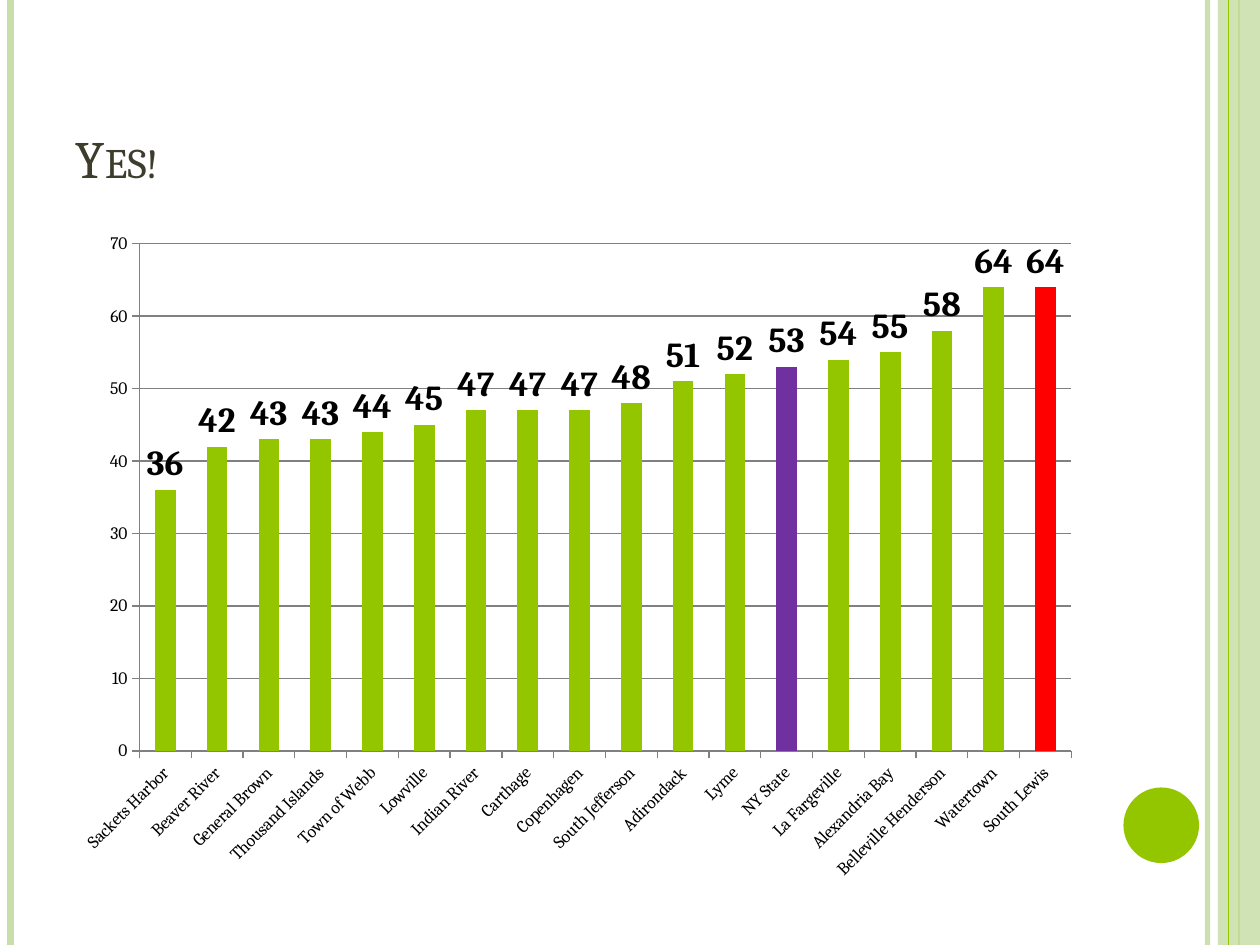
import pptx
import pptx.chart.data
import pptx.dml.color
import pptx.enum.chart
import pptx.enum.shapes
import pptx.enum.text
import pptx.oxml
import pptx.oxml.ns
import pptx.util

RGBColor = pptx.dml.color.RGBColor
LEAF = RGBColor(0x94, 0xC6, 0x00)
PALE = RGBColor(0xC8, 0xDF, 0xAB)
OLIVE = RGBColor(0x3E, 0x3D, 0x2D)
PURPLE = RGBColor(0x70, 0x30, 0xA0)
RED = RGBColor(0xFF, 0x00, 0x00)
BLACK = RGBColor(0x00, 0x00, 0x00)
GRAY = RGBColor(0x80, 0x80, 0x80)

SCORES = {
    "Sackets Harbor": 36, "Beaver River": 42, "General Brown": 43,
    "Thousand Islands": 43, "Town of Webb": 44, "Lowville": 45,
    "Indian River": 47, "Carthage": 47, "Copenhagen": 47,
    "South Jefferson": 48, "Adirondack": 51, "Lyme": 52, "NY State": 53,
    "La Fargeville": 54, "Alexandria Bay": 55, "Belleville Henderson": 58,
    "Watertown": 64, "South Lewis": 64,
}
HIGHLIGHTS = {"NY State": PURPLE, "South Lewis": RED}


def style_font(font, size, color, bold=False, name="Cambria"):
    font.name = name
    font.size = pptx.util.Pt(size)
    font.bold = bold
    font.color.rgb = color


def write_text(frame, words, size=18, color=BLACK, small_caps=False):
    frame.text = words
    paragraph = frame.paragraphs[0]
    paragraph.alignment = pptx.enum.text.PP_ALIGN.LEFT
    run = paragraph.runs[0]
    style_font(run.font, size, color)
    if small_caps:
        run.font._element.set("cap", "small")


def set_alpha(fill_parent, percent):
    for color in fill_parent.iter(pptx.oxml.ns.qn("a:srgbClr")):
        alpha = pptx.oxml.parse_xml(
            '<a:alpha %s val="%d"/>' % (pptx.oxml.ns.nsdecls("a"), percent * 1000))
        color.append(alpha)


class SlideBuilder:
    COLUMNS = 120
    ROWS = 90

    def __init__(self, deck):
        self.column = deck.slide_width / self.COLUMNS
        self.row = deck.slide_height / self.ROWS
        self.slide = deck.slides.add_slide(deck.slide_layouts[5])

    def box(self, left, top, width, height):
        return (round(left * self.column), round(top * self.row),
                round(width * self.column), round(height * self.row))

    def stripe(self, column, width, color, opacity=100):
        left, top, _, bottom = self.box(column, 0, 0, self.ROWS)
        line = self.slide.shapes.add_connector(
            pptx.enum.shapes.MSO_CONNECTOR.STRAIGHT, left, top, left, bottom)
        line.line.width = pptx.util.Pt(width)
        line.line.color.rgb = color
        properties = line._element.spPr
        if opacity < 100:
            set_alpha(properties, opacity)
        properties.append(pptx.oxml.parse_xml(
            "<a:effectLst %s/>" % pptx.oxml.ns.nsdecls("a")))

    def shape(self, kind, box, color, opacity=100):
        shape = self.slide.shapes.add_shape(kind, *self.box(*box))
        shape.shadow.inherit = False
        shape.fill.solid()
        shape.fill.fore_color.rgb = color
        shape.line.fill.background()
        if opacity < 100:
            set_alpha(shape._element.spPr, opacity)

    def title(self, words, box):
        title = self.slide.shapes.title
        title.left, title.top, title.width, title.height = self.box(*box)
        frame = title.text_frame
        frame.auto_size = pptx.enum.text.MSO_AUTO_SIZE.NONE
        frame.vertical_anchor = pptx.enum.text.MSO_ANCHOR.BOTTOM
        write_text(frame, words, size=30, color=OLIVE, small_caps=True)

    def column_chart(self, scores, highlights, box):
        data = pptx.chart.data.CategoryChartData()
        data.categories = list(scores)
        data.add_series("Series 1", list(scores.values()))
        chart = self.slide.shapes.add_chart(
            pptx.enum.chart.XL_CHART_TYPE.COLUMN_CLUSTERED,
            *self.box(*box), data).chart
        chart.has_legend = False
        chart.has_title = False
        style_font(chart.font, 10, BLACK)

        plot = chart.plots[0]
        plot.gap_width = 150
        plot.vary_by_categories = False
        series = plot.series[0]
        series.format.fill.solid()
        series.format.fill.fore_color.rgb = LEAF
        districts = list(scores)
        for district, color in highlights.items():
            fill = series.points[districts.index(district)].format.fill
            fill.solid()
            fill.fore_color.rgb = color
        labels = series.data_labels
        labels.show_value = True
        labels.position = pptx.enum.chart.XL_LABEL_POSITION.OUTSIDE_END
        style_font(labels.font, 20, BLACK, bold=True)

        scale = chart.value_axis
        scale.minimum_scale, scale.maximum_scale, scale.major_unit = 0, 70, 10
        scale.has_major_gridlines = True
        for line in (scale.major_gridlines.format.line, scale.format.line,
                     chart.category_axis.format.line):
            line.color.rgb = GRAY
            line.width = pptx.util.Pt(0.75)
        for axis in (scale, chart.category_axis):
            axis.major_tick_mark = pptx.enum.chart.XL_TICK_MARK.OUTSIDE
            style_font(axis.tick_labels.font, 10, BLACK)
        names = chart.category_axis._element.find(pptx.oxml.ns.qn("c:txPr"))
        names.find(pptx.oxml.ns.qn("a:bodyPr")).set("rot", "-2700000")


def main():
    deck = pptx.Presentation()
    deck.slide_width = pptx.util.Inches(10)
    deck.slide_height = pptx.util.Inches(7.5)
    builder = SlideBuilder(deck)
    shapes = pptx.enum.shapes.MSO_SHAPE
    builder.stripe(115, 3, PALE, opacity=93)
    builder.stripe(1, 4.5, PALE)
    builder.stripe(118, 1.5, LEAF)
    builder.shape(shapes.RECTANGLE, (116, 0, 4, 90), PALE, opacity=87)
    builder.stripe(117, 0.75, LEAF)
    builder.shape(shapes.OVAL, (107, 75, 7.2, 7.2), LEAF)
    builder.title("Yes!", (6, 3.6, 98, 15))
    builder.column_chart(SCORES, HIGHLIGHTS, (6, 21, 98, 64))
    deck.save("out.pptx")


if __name__ == "__main__":
    main()
